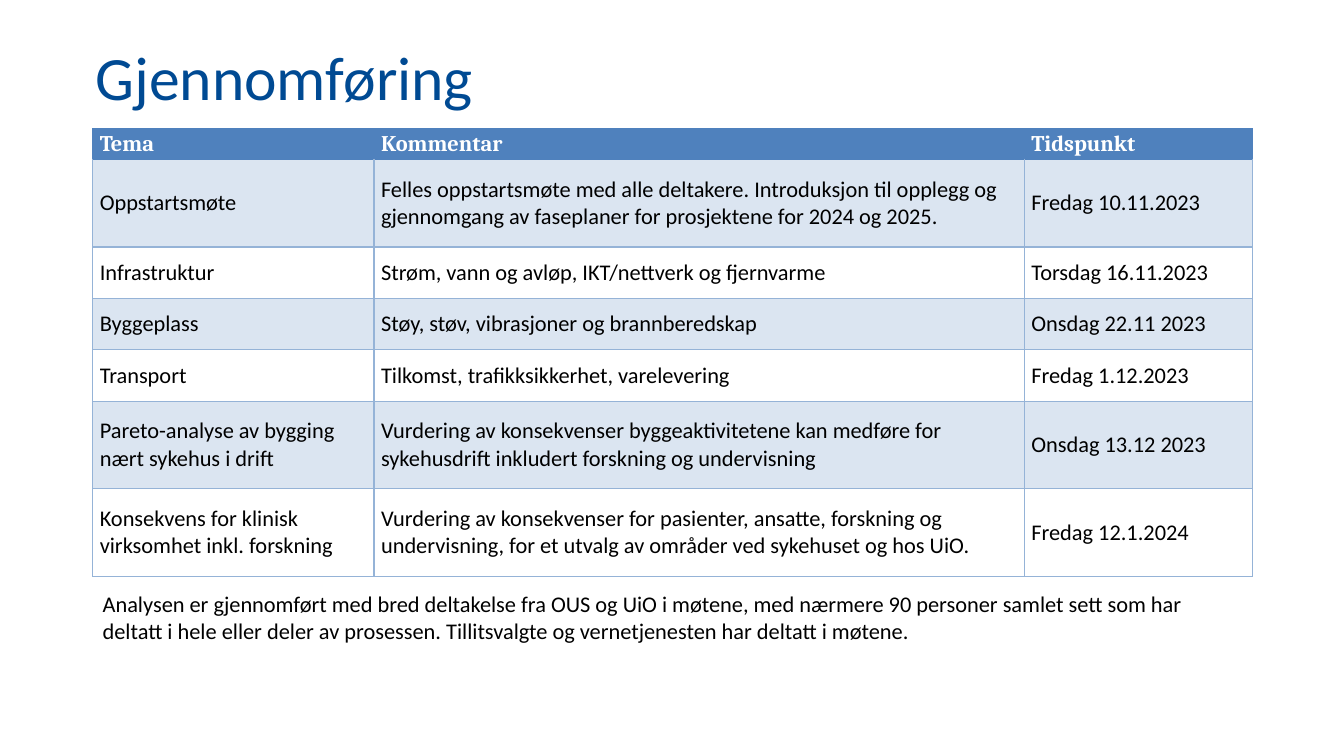
"""Build the slide "Gjennomføring" with its meeting schedule table."""
from lxml import etree
from pptx import Presentation, dml, util as u
from pptx.dml import color
from pptx.enum import text
from pptx.oxml import ns

HEADER, BAND, GRID = "4F81BD", "DBE5F1", "95B3D7"


def rgb(value):
    return color.RGBColor.from_string(value)


def write(tf, content, size, hex_color, name="Calibri", bold=False):
    tf.word_wrap = True
    p = tf.paragraphs[0]
    r = p.add_run()
    r.text = content
    for key, value in dict(size=u.Pt(size), name=name, bold=bold).items():
        setattr(r.font, key, value)
    r.font.color.rgb = rgb(hex_color)
    return p


prs = Presentation()
prs.slide_width, prs.slide_height = u.Inches(13.33), u.Inches(7.5)
s = prs.slides.add_slide(prs.slide_layouts[6])

title = s.shapes.add_textbox(u.Inches(0.85), u.Inches(0.4), u.Inches(10.65), u.Inches(0.79))
title.text_frame.vertical_anchor = text.MSO_ANCHOR.MIDDLE
write(title.text_frame, "Gjennomføring", 44, "004A93").line_spacing = 0.9

rows = [
    ("Tema", "Kommentar", "Tidspunkt"),
    ("Oppstartsmøte",
     "Felles oppstartsmøte med alle deltakere. Introduksjon til opplegg og "
     "gjennomgang av faseplaner for prosjektene for 2024 og 2025.",
     "Fredag 10.11.2023"),
    ("Infrastruktur", "Strøm, vann og avløp, IKT/nettverk og fjernvarme", "Torsdag 16.11.2023"),
    ("Byggeplass", "Støy, støv, vibrasjoner og brannberedskap", "Onsdag 22.11 2023"),
    ("Transport", "Tilkomst, trafikksikkerhet, varelevering", "Fredag 1.12.2023"),
    ("Pareto-analyse av bygging nært sykehus i drift",
     "Vurdering av konsekvenser byggeaktivitetene kan medføre for "
     "sykehusdrift inkludert forskning og undervisning",
     "Onsdag 13.12 2023"),
    ("Konsekvens for klinisk virksomhet inkl. forskning",
     "Vurdering av konsekvenser for pasienter, ansatte, forskning og "
     "undervisning, for et utvalg av områder ved sykehuset og hos UiO.",
     "Fredag 12.1.2024"),
]
widths = [2.79, 6.45, 2.26]
heights = [0.3, 0.87, 0.51, 0.51, 0.51, 0.87, 0.87]
table = s.shapes.add_table(len(rows), len(widths), u.Inches(0.92), u.Inches(1.28),
                           u.Inches(sum(widths)), u.Inches(sum(heights))).table
for column, width in zip(table.columns, widths):
    column.width = u.Inches(width)

cell_format = dict(margin_left=u.Inches(0.07), margin_right=u.Inches(0.07),
                   margin_top=0, margin_bottom=0, vertical_anchor=text.MSO_ANCHOR.MIDDLE)
for i, (row, height) in enumerate(zip(rows, heights)):
    table.rows[i].height = u.Inches(height)
    for j, content in enumerate(row):
        cell = table.cell(i, j)
        for key, value in cell_format.items():
            setattr(cell, key, value)
        if i == 0:
            write(cell.text_frame, content, 16, "FFFFFF", "Cambria", True)
        else:
            write(cell.text_frame, content, 16, "000000")
        tcPr = cell._tc.get_or_add_tcPr()
        for side in ("lnL", "lnR", "lnT", "lnB"):
            line_color = HEADER if i == 0 or (i == 1 and side == "lnT") else GRID
            ln = etree.SubElement(tcPr, ns.qn("a:" + side), w=str(u.Pt(1)))
            solid = etree.SubElement(ln, ns.qn("a:solidFill"))
            etree.SubElement(solid, ns.qn("a:srgbClr"), val=line_color)
        if i % 2 or i == 0:
            cell.fill.solid()
            cell.fill.fore_color.rgb = rgb(BAND if i else HEADER)
        else:
            cell.fill.background()

note = s.shapes.add_textbox(u.Inches(0.92), u.Inches(5.81), u.Inches(11.5), u.Inches(1.13))
write(note.text_frame,
      "Analysen er gjennomført med bred deltakelse fra OUS og UiO i møtene, med nærmere "
      "90 personer samlet sett som har deltatt i hele eller deler av prosessen. "
      "Tillitsvalgte og vernetjenesten har deltatt i møtene.", 16, "000000")

prs.save("out.pptx")
